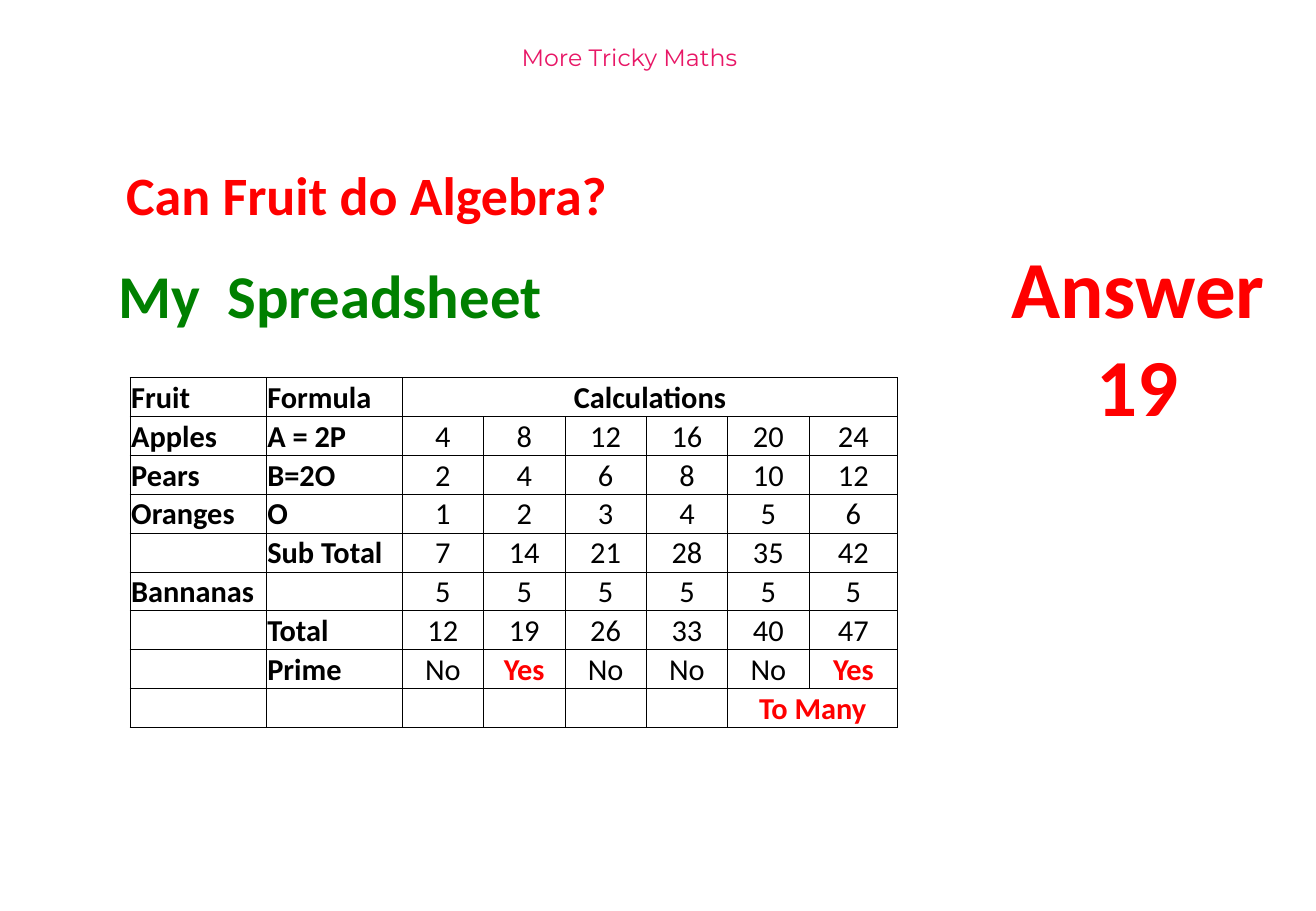
from dataclasses import dataclass

from lxml import etree
from pptx import Presentation
from pptx.dml.color import RGBColor
from pptx.enum.text import MSO_ANCHOR, PP_ALIGN
from pptx.oxml.ns import qn
from pptx.slide import Slide
from pptx.table import _Cell
from pptx.text.text import _Paragraph
from pptx.util import Inches, Pt

LEFT, CENTER = PP_ALIGN.LEFT, PP_ALIGN.CENTER
BOTTOM = MSO_ANCHOR.BOTTOM


@dataclass(frozen=True)
class Theme:
    """Colours, fonts and type sizes of the slide."""
    pink: str = "E81766"
    red: str = "FF0000"
    green: str = "008000"
    black: str = "000000"
    body_font: str = "Calibri"
    banner_font: str = "Montserrat"
    banner: int = 14
    table: int = 18
    question: int = 32
    heading: int = 36
    answer: int = 48
    border: float = 0.5


THEME = Theme()


@dataclass(frozen=True)
class Style:
    """The look of one paragraph."""
    size: int
    color: str
    bold: bool = True
    align: PP_ALIGN = CENTER
    font: str = THEME.body_font


@dataclass(frozen=True)
class Label:
    """A text box with its place in inches."""
    text: str
    left: float
    top: float
    width: float
    height: float
    style: Style
    wrap: bool = False


LABELS = (
    Label("More Tricky Maths", 3.96, 0.3, 2.44, 0.58,
          Style(THEME.banner, THEME.pink, bold=False, font=THEME.banner_font)),
    Label("Can Fruit do Algebra?", 0.94, 1.28, 4.2, 0.64,
          Style(THEME.question, THEME.red, align=LEFT)),
    Label("My  Spreadsheet", 0.8, 2.07, 3.83, 0.71,
          Style(THEME.heading, THEME.green), wrap=True),
    Label("Answer\n19", 8.21, 1.91, 2.31, 1.72, Style(THEME.answer, THEME.red)),
)

ROWS = (
    ("Fruit", "Formula", "Calculations", "", "", "", "", ""),
    ("Apples", "A = 2P", "4", "8", "12", "16", "20", "24"),
    ("Pears", "B=2O", "2", "4", "6", "8", "10", "12"),
    ("Oranges", "O", "1", "2", "3", "4", "5", "6"),
    ("", "Sub Total", "7", "14", "21", "28", "35", "42"),
    ("Bannanas", "", "5", "5", "5", "5", "5", "5"),
    ("", "Total", "12", "19", "26", "33", "40", "47"),
    ("", "Prime", "No", "Yes", "No", "No", "No", "Yes"),
    ("", "", "", "", "", "", "To Many", ""),
)
COL_WIDTHS = (1.12, 1.12, *[0.67] * 5, 0.73)
ROW_HEIGHT = 0.32
MERGES = (((0, 2), (0, 7)), ((8, 6), (8, 7)))
ALERTS = ("Yes", "To Many")


def write(p: _Paragraph, text: str, style: Style) -> None:
    """Fill a paragraph with styled text."""
    p.text = text
    p.alignment = style.align
    p.font.name = style.font
    p.font.size = Pt(style.size)
    p.font.bold = style.bold
    p.font.color.rgb = RGBColor.from_string(style.color)


def add_label(slide: Slide, label: Label) -> None:
    """Draw one text box."""
    box = (label.left, label.top, label.width, label.height)
    tf = slide.shapes.add_textbox(*map(Inches, box)).text_frame
    tf.word_wrap = label.wrap
    write(tf.paragraphs[0], label.text, label.style)


def add_borders(cell: _Cell) -> None:
    """Rule all four sides of a cell."""
    tcPr = cell._tc.get_or_add_tcPr()
    for i, side in enumerate(("lnL", "lnR", "lnT", "lnB")):
        ln = etree.Element(qn(f"a:{side}"), w=str(Pt(THEME.border)))
        fill = etree.SubElement(ln, qn("a:solidFill"))
        etree.SubElement(fill, qn("a:srgbClr"), val=THEME.black)
        tcPr.insert(i, ln)


def cell_style(row: int, col: int, text: str) -> Style:
    """Choose the look of a cell from its place and text."""
    alert = text in ALERTS
    return Style(
        THEME.table,
        THEME.red if alert else THEME.black,
        bold=alert or row == 0 or col < 2,
        align=LEFT if col < 2 else CENTER,
    )


def add_spreadsheet(slide: Slide) -> None:
    """Draw the table of fruit calculations."""
    table = slide.shapes.add_table(
        len(ROWS), len(COL_WIDTHS), Inches(1.07), Inches(3.11),
        Inches(sum(COL_WIDTHS)), Inches(ROW_HEIGHT * len(ROWS)),
    ).table
    table.first_row = table.horz_banding = False
    for column, width in zip(table.columns, COL_WIDTHS):
        column.width = Inches(width)
    for r, texts in enumerate(ROWS):
        table.rows[r].height = Inches(ROW_HEIGHT)
        for c, text in enumerate(texts):
            cell = table.cell(r, c)
            cell.margin_left = cell.margin_right = cell.margin_top = Inches(0.01)
            cell.margin_bottom = 0
            cell.vertical_anchor = BOTTOM
            cell.fill.background()
            add_borders(cell)
            write(cell.text_frame.paragraphs[0], text, cell_style(r, c, text))
    for first, last in MERGES:
        table.cell(*first).merge(table.cell(*last))


def main() -> None:
    """Build and save the slide."""
    prs = Presentation()
    prs.slide_width, prs.slide_height = Inches(10.83), Inches(7.5)
    slide = prs.slides.add_slide(prs.slide_layouts[6])
    for label in LABELS:
        add_label(slide, label)
    add_spreadsheet(slide)
    prs.save("out.pptx")


if __name__ == "__main__":
    main()
